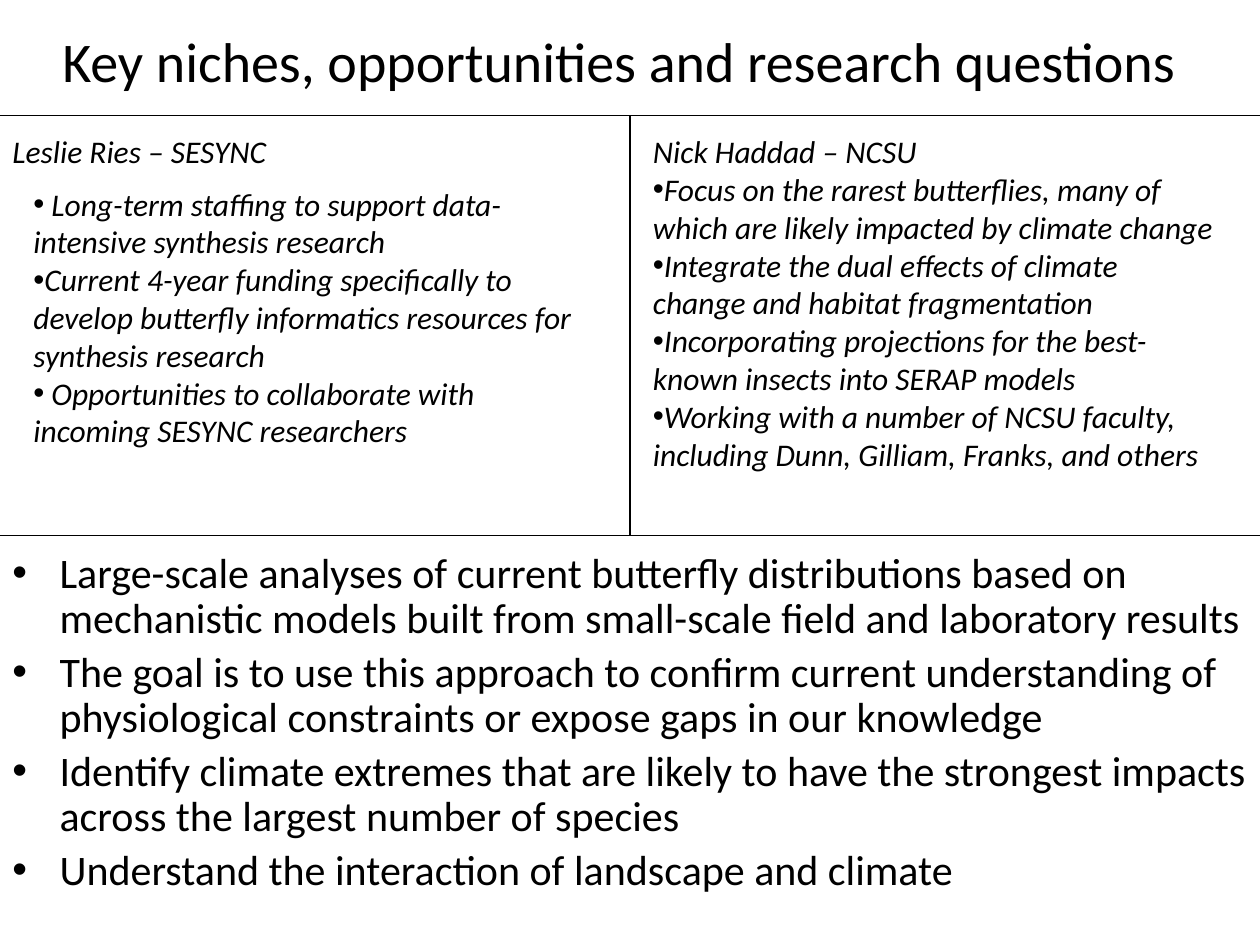
from dataclasses import dataclass

import pptx
import pptx.dml.color
import pptx.enum.shapes
import pptx.enum.text
import pptx.oxml
import pptx.oxml.ns
import pptx.util
from lxml import etree

ALIGN = pptx.enum.text.PP_ALIGN
ANCHOR = pptx.enum.text.MSO_ANCHOR


@dataclass(frozen=True)
class Theme:
    font: str = "Calibri"
    ink: pptx.dml.color.RGBColor = pptx.dml.color.RGBColor(0, 0, 0)
    paper: pptx.dml.color.RGBColor = pptx.dml.color.RGBColor(255, 255, 255)
    title_size: int = 32
    question_size: int = 24
    niche_size: int = 18
    rule_width: float = 0.75


@dataclass(frozen=True)
class Area:
    """A place on the grid, in columns and rows."""
    column: float
    row: float
    columns: float
    rows: float


@dataclass(frozen=True)
class TextBlock:
    area: Area
    lines: tuple[str, ...]
    size: int
    italic: bool = False
    first_bullet: int | None = None  # index of the first bulleted line
    hanging: float = 0  # columns
    line_spacing: float = 1.0
    space_before: float = 0  # share of the type size
    wrap: bool = True
    align: ALIGN = ALIGN.LEFT
    anchor: ANCHOR = ANCHOR.TOP


@dataclass(frozen=True)
class Divider:
    start: tuple[float, float]
    end: tuple[float, float]


THEME = Theme()

# Square grid of twelve units to the inch
COLUMNS, ROWS = 120, 90
TOP_RULE, BOTTOM_RULE, MIDDLE = 11, 51, COLUMNS / 2

DIVIDERS = (
    Divider((0, TOP_RULE), (COLUMNS, TOP_RULE)),
    Divider((0, BOTTOM_RULE), (COLUMNS, BOTTOM_RULE)),
    Divider((MIDDLE, TOP_RULE), (MIDDLE, BOTTOM_RULE)),
)

TEXT_BLOCKS = (
    # Title
    TextBlock(
        Area(2, 2, 114, 7.5),
        ("Key niches, opportunities and research questions",),
        THEME.title_size, align=ALIGN.CENTER, anchor=ANCHOR.MIDDLE),
    # Research questions
    TextBlock(
        Area(0, BOTTOM_RULE + 1, COLUMNS, 36),
        ("Large-scale analyses of current butterfly distributions based on "
         "mechanistic models built from small-scale field and laboratory results",
         "The goal is to use this approach to confirm current understanding of "
         "physiological constraints or expose gaps in our knowledge",
         "Identify climate extremes that are likely to have the strongest impacts "
         "across the largest number of species",
         "Understand the interaction of landscape and climate"),
        THEME.question_size, first_bullet=0, hanging=4.5,
        line_spacing=0.9, space_before=0.2),
    # Left niche: heading, then its points
    TextBlock(
        Area(0, TOP_RULE + 1, 28, 5), ("Leslie Ries – SESYNC",),
        THEME.niche_size, italic=True, wrap=False),
    TextBlock(
        Area(2, TOP_RULE + 6, 56, 26.5),
        (" Long-term staffing to support data-intensive synthesis research",
         "Current 4-year funding specifically to develop butterfly informatics "
         "resources for synthesis research",
         " Opportunities to collaborate with incoming SESYNC researchers"),
        THEME.niche_size, italic=True, first_bullet=0),
    # Right niche: heading and points together
    TextBlock(
        Area(MIDDLE + 1, TOP_RULE + 1, 56, 34),
        ("Nick Haddad – NCSU",
         "Focus on the rarest butterflies, many of which are likely impacted by "
         "climate change",
         "Integrate the dual effects of climate change and habitat fragmentation",
         "Incorporating projections for the best-known insects into SERAP models",
         "Working with a number of NCSU faculty, including Dunn, Gilliam, Franks, "
         "and others"),
        THEME.niche_size, italic=True, first_bullet=1),
)


def grid(units: float) -> pptx.util.Length:
    return pptx.util.Inches(units / 12)


def add_bullet(paragraph, hanging: float) -> None:
    properties = paragraph._p.get_or_add_pPr()
    properties.set("marL", str(grid(hanging)))
    properties.set("indent", str(-grid(hanging)))
    font = etree.SubElement(properties, pptx.oxml.ns.qn("a:buFont"))
    font.set("typeface", "Arial")
    bullet = etree.SubElement(properties, pptx.oxml.ns.qn("a:buChar"))
    bullet.set("char", "•")


def draw_text(slide, block: TextBlock) -> None:
    area = block.area
    box = slide.shapes.add_textbox(
        grid(area.column), grid(area.row), grid(area.columns), grid(area.rows))
    frame = box.text_frame
    frame.word_wrap = block.wrap
    frame.vertical_anchor = block.anchor
    frame.text = "\n".join(block.lines)
    for index, paragraph in enumerate(frame.paragraphs):
        paragraph.alignment = block.align
        paragraph.line_spacing = block.line_spacing
        paragraph.space_before = pptx.util.Pt(block.space_before * block.size)
        if block.first_bullet is not None and index >= block.first_bullet:
            add_bullet(paragraph, block.hanging)
        for run in paragraph.runs:
            run.font.name = THEME.font
            run.font.size = pptx.util.Pt(block.size)
            run.font.italic = block.italic
            run.font.color.rgb = THEME.ink


def draw_divider(slide, divider: Divider) -> None:
    rule = slide.shapes.add_connector(
        pptx.enum.shapes.MSO_CONNECTOR.STRAIGHT,
        *map(grid, divider.start + divider.end))
    rule.line.color.rgb = THEME.ink
    rule.line.width = pptx.util.Pt(THEME.rule_width)
    etree.SubElement(rule._element.spPr, pptx.oxml.ns.qn("a:effectLst"))


def main() -> None:
    deck = pptx.Presentation()
    deck.slide_width, deck.slide_height = grid(COLUMNS), grid(ROWS)
    slide = deck.slides.add_slide(deck.slide_layouts[6])
    slide.background.fill.solid()
    slide.background.fill.fore_color.rgb = THEME.paper
    for divider in DIVIDERS:
        draw_divider(slide, divider)
    for block in TEXT_BLOCKS:
        draw_text(slide, block)
    deck.save("out.pptx")


if __name__ == "__main__":
    main()
